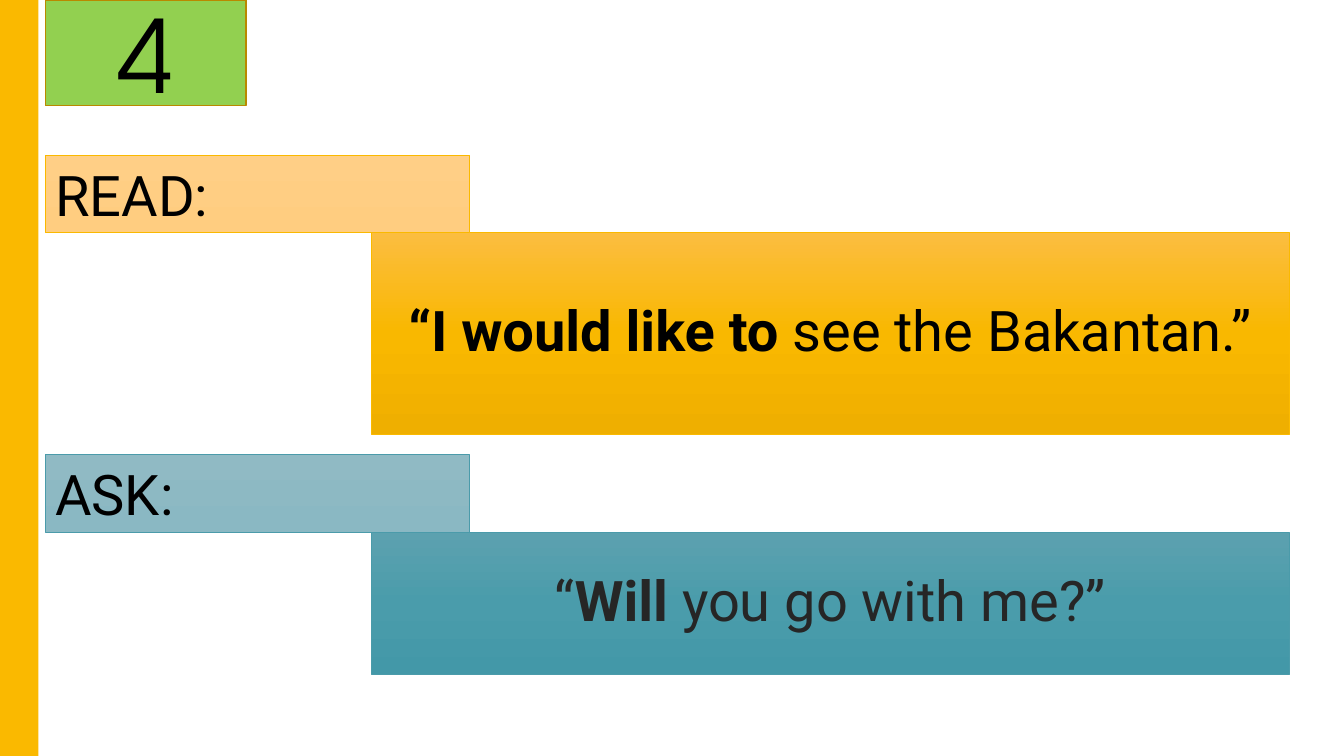
from copy import deepcopy
from pptx import Presentation
from pptx import util as u
from pptx.dml.color import RGBColor
from pptx.enum import shapes, text
from pptx.oxml.ns import qn

WIDE, HIGH = 13.33, 7.5

# Runs are (words, bold)
NUMBER = [("4", False)]
PAIRS = [
    dict(name="read", label="READ:", top=1.54, tall=2.0,
         words=[("“I would like to", True), (" see the Bakantan.”", False)]),
    dict(name="ask", label="ASK:", top=4.51, tall=1.41,
         words=[("“", False), ("Will ", True), ("you go with me?”", False)]),
]

THEME = dict(
    bar="FAB900", badge="92D050", edge="B98900", ink="000000",
    head="TeX Gyre Adventor", body="Roboto", big=72, size=40,
    read=dict(tag=["FFCF86", "FFCD80"], box=["FBBD40", "F9B800", "EFAF00"],
              line="FAB900", ink="000000"),
    ask=dict(tag=["90BAC4", "8AB8C3"], box=["5CA1AF", "4A9CAB", "4398A8"],
             line="4B9BAA", ink="262626"),
)

BAR = 0.38
LEFT, TAG_W, TAG_H = 0.45, 4.21, 0.77
BOX_X, BOX_W = 3.68, 9.11
PAD = 0.2


def place(shape, *spot):
    shape.left, shape.top, shape.width, shape.height = map(u.Inches, spot)


def paint(shape, tones, line=None, width=0.5):
    """Fill with one colour, or with a top-to-bottom gradient of several."""
    fill = shape.fill
    if len(tones) == 1:
        fill.solid()
        fill.fore_color.rgb = RGBColor.from_string(tones[0])
    else:
        fill.gradient()
        fill.gradient_angle = 270
        stops = shape._element.spPr.find(".//" + qn("a:gsLst"))
        while len(stops) < len(tones):
            stops.append(deepcopy(stops[0]))
        for i, (stop, tone) in enumerate(zip(fill.gradient_stops, tones)):
            stop.position = i / (len(tones) - 1)
            stop.color.rgb = RGBColor.from_string(tone)
    if line:
        shape.line.color.rgb = RGBColor.from_string(line)
        shape.line.width = u.Pt(width)
    else:
        shape.line.fill.background()


def write(shape, runs, font, size, ink, align, pad=None):
    frame = shape.text_frame
    frame.word_wrap = True
    frame.auto_size = text.MSO_AUTO_SIZE.NONE
    frame.vertical_anchor = text.MSO_ANCHOR.MIDDLE
    para = frame.paragraphs[0]
    para.alignment = align
    if pad:
        frame.margin_left = frame.margin_right = u.Inches(pad)
        frame.margin_top = frame.margin_bottom = u.Inches(pad)
        para.line_spacing = 0.9
        para.space_before = u.Pt(0)
    for words, bold in runs:
        run = para.add_run()
        run.text = words
        run.font.name, run.font.size, run.font.bold = font, u.Pt(size), bold
        run.font.color.rgb = RGBColor.from_string(ink)


def main():
    deck = Presentation()
    deck.slide_width, deck.slide_height = u.Inches(WIDE), u.Inches(HIGH)
    slide = deck.slides.add_slide(deck.slide_layouts[5])

    def rect(*spot):
        shape = slide.shapes.add_shape(
            shapes.MSO_SHAPE.RECTANGLE, *map(u.Inches, spot))
        shape.shadow.inherit = False
        return shape

    mid, left = text.PP_ALIGN.CENTER, text.PP_ALIGN.LEFT
    paint(rect(0, 0, BAR, HIGH), [THEME["bar"]])
    badge = rect(LEFT, 0, 1.99, 1.05)
    paint(badge, [THEME["badge"]], THEME["edge"], 1)
    write(badge, NUMBER, THEME["head"], THEME["big"], THEME["ink"], mid)

    for pair in PAIRS:
        look = THEME[pair["name"]]
        tag = rect(LEFT, pair["top"], TAG_W, TAG_H)
        paint(tag, look["tag"], look["line"])
        write(tag, [(pair["label"], False)], THEME["body"], THEME["size"],
              THEME["ink"], left)

        spot = BOX_X, pair["top"] + TAG_H, BOX_W, pair["tall"]
        if pair["name"] == "read":
            box = slide.shapes.title
            place(box, *spot)
        else:
            box = rect(*spot)
        paint(box, look["box"], look["line"])
        write(box, pair["words"], THEME["body"], THEME["size"],
              look["ink"], mid, PAD)

    deck.save("out.pptx")


if __name__ == "__main__":
    main()
